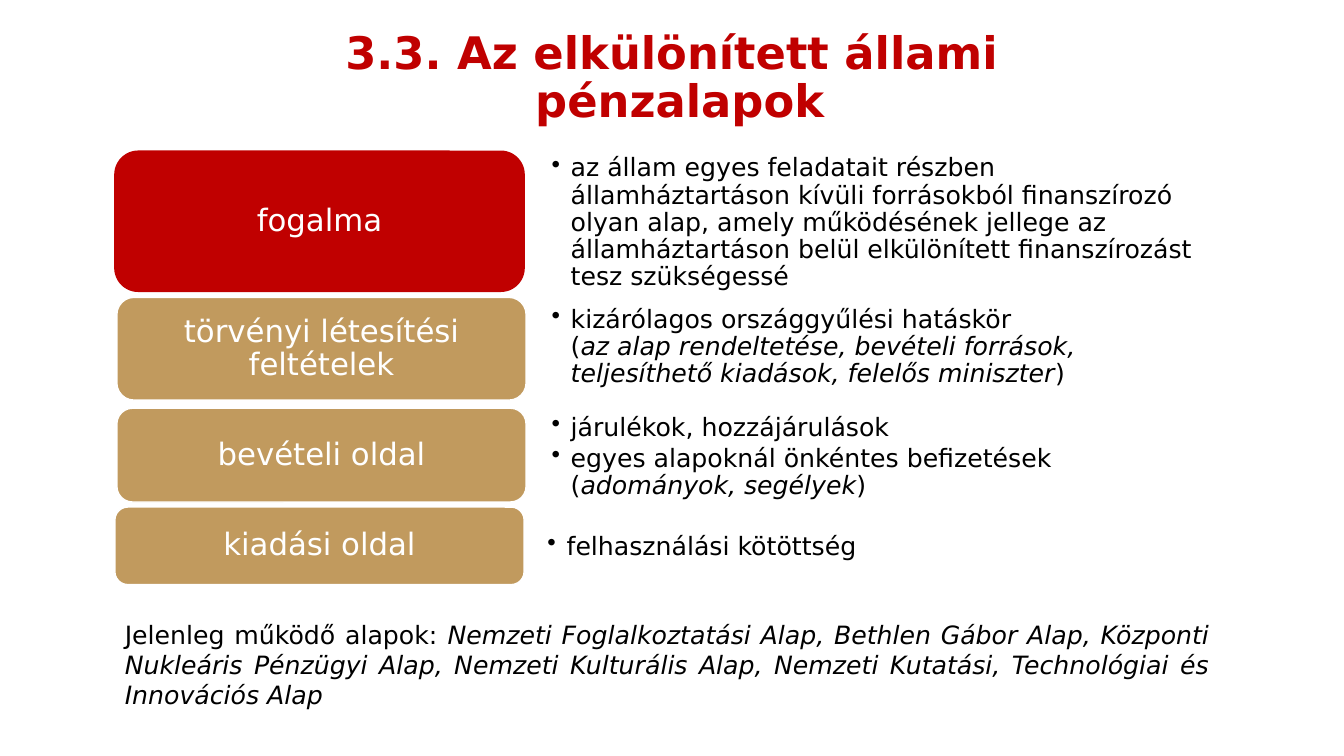
"""Builds a slide on separated state funds: four labelled rows and a closing note."""
from dataclasses import dataclass

from lxml import etree
from pptx import Presentation
from pptx.dml.color import RGBColor
from pptx.enum import shapes, text
from pptx.oxml import ns
from pptx.util import Pt


@dataclass(frozen=True)
class Theme:
    font: str = "DejaVu Sans"
    red: RGBColor = RGBColor(0xC0, 0x00, 0x00)
    gold: RGBColor = RGBColor(0xC1, 0x9A, 0x5E)
    white: RGBColor = RGBColor(0xFF, 0xFF, 0xFF)
    black: RGBColor = RGBColor(0x00, 0x00, 0x00)
    title: int = 32
    label: int = 22
    body: int = 18


THEME = Theme()
TITLE = [("3.3. Az elkülönített állami \vpénzalapok", False)]
TITLE_AREA = (145.4, 9.4, 680.4, 93.6)
ROWS = [
    dict(label="fogalma", fill=THEME.red, line=THEME.red,
         left=82.1, top=108, height=100.1, list_left=374.4, list_top=121, list_height=77,
         points=[[("az állam egyes feladatait részben államháztartáson kívüli "
                   "forrásokból finanszírozó olyan alap, amely működésének jellege az "
                   "államháztartáson belül elkülönített finanszírozást tesz szükségessé",
                   False)]]),
    dict(label="törvényi létesítési feltételek", fill=THEME.gold, line=THEME.white,
         left=83.5, top=212.4, height=73.4, list_left=374.4, list_top=220.3, list_height=55.4,
         points=[[("kizárólagos országgyűlési hatáskör \v(", False),
                  ("az alap rendeltetése, bevételi források, teljesíthető kiadások, "
                   "felelős miniszter", True),
                  (")", False)]]),
    dict(label="bevételi oldal", fill=THEME.gold, line=THEME.white,
         left=83.5, top=291.6, height=67, list_left=374.4, list_top=290.2, list_height=72.7,
         points=[[("járulékok, hozzájárulások", False)],
                 [("egyes alapoknál önkéntes befizetések (", False),
                  ("adományok, segélyek", True),
                  (")", False)]]),
    dict(label="kiadási oldal", fill=THEME.gold, line=THEME.white,
         left=82.1, top=362.2, height=55.4, list_left=371.5, list_top=381.6, list_height=18,
         points=[[("felhasználási kötöttség", False)]]),
]
LABEL_WIDTH = 292.3
LIST_WIDTH = 515.8
LIST_INDENT = 13.7
NOTE = [
    ("Jelenleg működő alapok: ", False),
    ("Nemzeti Foglalkoztatási Alap, Bethlen Gábor Alap, Központi Nukleáris Pénzügyi "
     "Alap, Nemzeti Kulturális Alap, Nemzeti Kutatási, Technológiai és Innovációs Alap", True),
]
NOTE_AREA = (82.1, 438.5, 789.1, 94.3)


def points(*lengths):
    return [Pt(length) for length in lengths]


def set_frame(box, margins, anchor):
    frame = box.text_frame
    frame.word_wrap = True
    frame.auto_size = text.MSO_AUTO_SIZE.NONE
    frame.vertical_anchor = anchor
    frame.margin_left = frame.margin_right = Pt(margins[0])
    frame.margin_top = frame.margin_bottom = Pt(margins[1])
    return frame


def write(para, spans, size, color, align, spacing=0.9, bold=False):
    para.alignment = align
    para.line_spacing = spacing
    para.font.name = THEME.font
    para.font.size = Pt(size)
    para.font.bold = bold
    para.font.color.rgb = color
    for words, italic in spans:
        for number, part in enumerate(words.split("\v")):
            if number:
                para.add_line_break()
            span = para.add_run()
            span.text = part
            if italic:
                span.font.italic = True


def add_bullet(para):
    properties = para._p.get_or_add_pPr()
    properties.set("marL", str(Pt(LIST_INDENT)))
    properties.set("indent", str(-Pt(LIST_INDENT)))
    etree.SubElement(properties, ns.qn("a:buChar")).set("char", "•")


def add_row(page, row):
    label = page.shapes.add_shape(
        shapes.MSO_SHAPE.ROUNDED_RECTANGLE,
        *points(row["left"], row["top"], LABEL_WIDTH, row["height"]))
    label.shadow.inherit = False
    label.fill.solid()
    label.fill.fore_color.rgb = row["fill"]
    label.line.color.rgb = row["line"]
    label.line.width = Pt(1)
    frame = set_frame(label, (10, 7), text.MSO_ANCHOR.MIDDLE)
    write(frame.paragraphs[0], [(row["label"], False)], THEME.label, THEME.white,
          text.PP_ALIGN.CENTER)

    box = page.shapes.add_textbox(
        *points(row["list_left"], row["list_top"], LIST_WIDTH, row["list_height"]))
    frame = set_frame(box, (19.6, 10), text.MSO_ANCHOR.MIDDLE)
    for number, spans in enumerate(row["points"]):
        para = frame.add_paragraph() if number else frame.paragraphs[0]
        add_bullet(para)
        para.space_after = Pt(2.7)
        write(para, spans, THEME.body, THEME.black, text.PP_ALIGN.LEFT)


def main():
    deck = Presentation()
    deck.slide_width, deck.slide_height = points(960, 540)
    page = deck.slides.add_slide(deck.slide_layouts.get_by_name("Title Only"))

    title = page.shapes.title
    title.left, title.top, title.width, title.height = points(*TITLE_AREA)
    frame = set_frame(title, (7.2, 3.6), text.MSO_ANCHOR.MIDDLE)
    write(frame.paragraphs[0], TITLE, THEME.title, THEME.red, text.PP_ALIGN.CENTER, bold=True)

    for row in ROWS:
        add_row(page, row)

    note = page.shapes.add_textbox(*points(*NOTE_AREA))
    frame = set_frame(note, (7.2, 3.6), text.MSO_ANCHOR.TOP)
    write(frame.paragraphs[0], NOTE, THEME.body, THEME.black, text.PP_ALIGN.JUSTIFY, spacing=1.0)

    deck.save("out.pptx")


if __name__ == "__main__":
    main()
